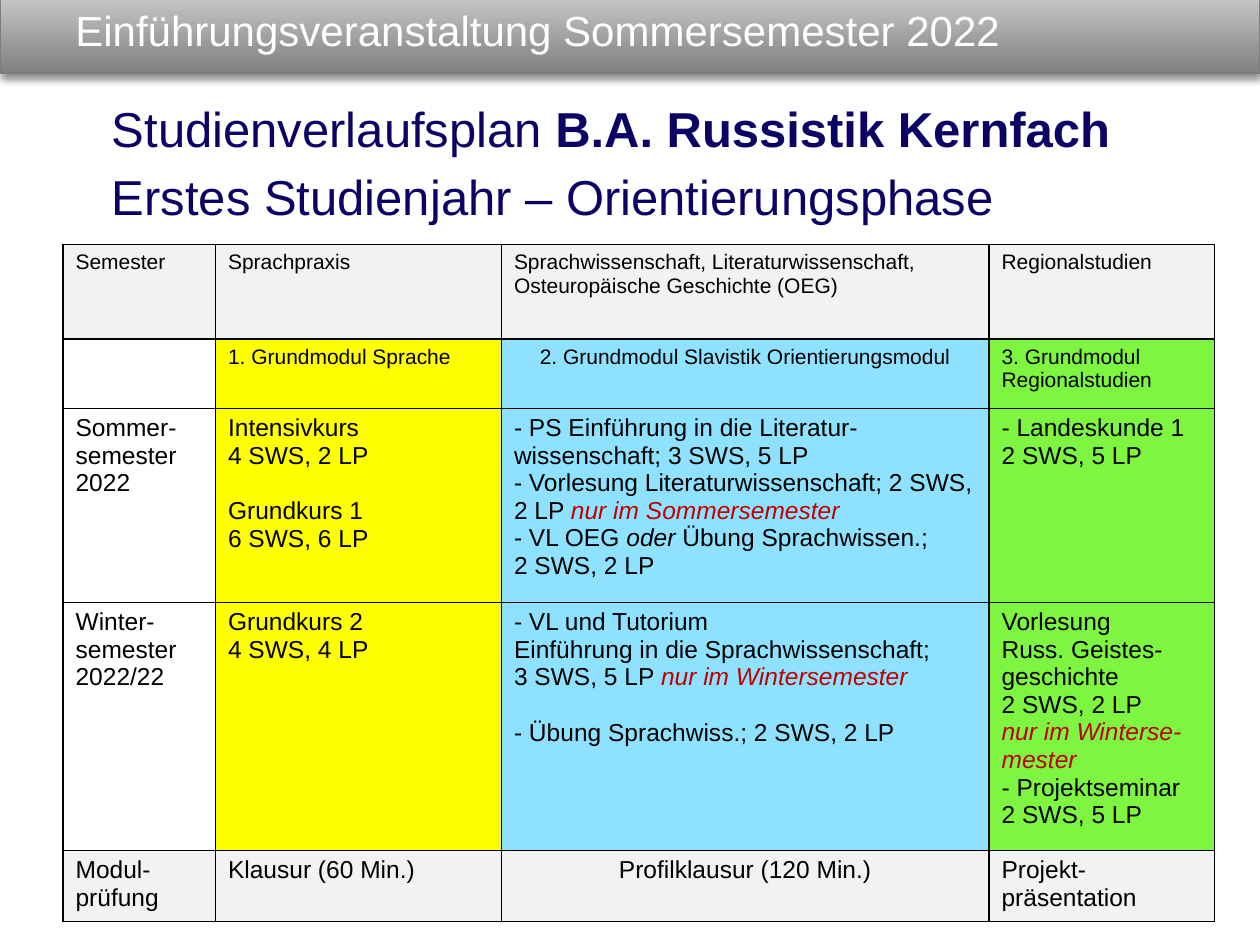
"""Build the first-year study plan slide for the Russian studies major."""
from typing import NamedTuple

import lxml.etree
import pptx
import pptx.dml.color
import pptx.enum.shapes
import pptx.enum.text
import pptx.oxml.ns
import pptx.util

Inches, Pt = pptx.util.Inches, pptx.util.Pt
RGBColor = pptx.dml.color.RGBColor
qn = pptx.oxml.ns.qn
ALIGN = pptx.enum.text.PP_ALIGN
ANCHOR = pptx.enum.text.MSO_ANCHOR

BLACK = RGBColor(0x00, 0x00, 0x00)
WHITE = RGBColor(0xFF, 0xFF, 0xFF)
NAVY = RGBColor(0x0A, 0x03, 0x65)
RED = RGBColor(0xC0, 0x00, 0x00)
LIGHT_GRAY = RGBColor(0xF2, 0xF2, 0xF2)
YELLOW = RGBColor(0xFF, 0xFF, 0x00)
BLUE = RGBColor(0x8F, 0xE2, 0xFF)
GREEN = RGBColor(0x7D, 0xF5, 0x41)
BAND_DARK = RGBColor(0x80, 0x80, 0x80)
BAND_LIGHT = RGBColor(0xCD, 0xCD, 0xCD)
BAND_EDGE = RGBColor(0x7D, 0x7D, 0x7D)

FONT = "Arial"
COLUMN_WIDTHS = (1.21, 2.27, 3.87, 1.79)
ROW_HEIGHTS = (0.75, 0.55, 1.54, 1.85, 0.54)
ROW_SIZES = (12, 12, 14, 14, 14)
GRAY_ROW = (LIGHT_GRAY,) * 4
MODULE_ROW = (None, YELLOW, BLUE, GREEN)
ROW_FILLS = (GRAY_ROW, MODULE_ROW, MODULE_ROW, MODULE_ROW, GRAY_ROW)
CENTERED_CELLS = {(1, 2), (4, 2)}


class Run(NamedTuple):
    """A piece of text that differs from its paragraph."""
    text: str
    bold: bool = False
    italic: bool = False
    color: RGBColor | None = None


class Line(NamedTuple):
    """A paragraph made of runs, with space before it in points."""
    runs: list
    space: float = 0


def only(term):
    """Return the red note on the term in which a course is offered."""
    return Run(f"nur im {term}", italic=True, color=RED)


HEADING = [
    Line(["Studienverlaufsplan ", Run("B.A. Russistik Kernfach", bold=True)]),
    Line(["Erstes Studienjahr – Orientierungsphase"], 5.5),
]
PLAN = [
    [["Semester"], ["Sprachpraxis"],
     ["Sprachwissenschaft, Literaturwissenschaft, Osteuropäische Geschichte (OEG)"],
     ["Regionalstudien"]],
    [[], ["1. Grundmodul Sprache"], ["2. Grundmodul Slavistik Orientierungsmodul"],
     ["3. Grundmodul Regionalstudien"]],
    [["Sommer-semester 2022"],
     ["Intensivkurs", "4 SWS, 2 LP", Line(["Grundkurs 1"], 16), "6 SWS, 6 LP"],
     ["- PS Einführung in die Literatur-wissenschaft; 3 SWS, 5 LP",
      Line(["- Vorlesung Literaturwissenschaft; 2 SWS, 2 LP ", only("Sommersemester")]),
      Line(["- VL OEG ", Run("oder", italic=True), " Übung Sprachwissen.;"]),
      "2 SWS, 2 LP"],
     ["- Landeskunde 1", "2 SWS, 5 LP"]],
    [["Winter-semester 2022/22"],
     ["Grundkurs 2", "4 SWS, 4 LP"],
     ["- VL und Tutorium", "Einführung in die Sprachwissenschaft;",
      Line(["3 SWS, 5 LP ", only("Wintersemester")]),
      Line(["- Übung Sprachwiss.; 2 SWS, 2 LP"], 16)],
     ["Vorlesung", "Russ. Geistes-geschichte", "2 SWS, 2 LP",
      Line([only("Winterse-mester")]), "- Projektseminar", "2 SWS, 5 LP"]],
    [["Modul-prüfung"], ["Klausur (60 Min.)"], ["Profilklausur (120 Min.)"],
     ["Projekt-präsentation"]],
]


def write_text(frame, lines, *, size, color=BLACK, align=ALIGN.LEFT):
    """Fill a text frame with lines in one base format."""
    frame.word_wrap = True
    for index, line in enumerate(lines):
        line = Line([line]) if isinstance(line, str) else line
        para = frame.add_paragraph() if index else frame.paragraphs[0]
        para.alignment = align
        if line.space:
            para.space_before = Pt(line.space)
        for part in line.runs:
            part = Run(part) if isinstance(part, str) else part
            span = para.add_run()
            span.text = part.text
            span.font.name = FONT
            span.font.size = Pt(size)
            span.font.bold = part.bold
            span.font.italic = part.italic
            span.font.color.rgb = part.color or color


def add_text_box(page, left, top, width, height, lines, *, anchor=ANCHOR.TOP,
                 margin_top=0.05, **text_format):
    """Add a text box and write its lines."""
    box = page.shapes.add_textbox(Inches(left), Inches(top), Inches(width), Inches(height))
    box.text_frame.vertical_anchor = anchor
    box.text_frame.margin_top = Inches(margin_top)
    write_text(box.text_frame, lines, **text_format)


def add_header_band(page):
    """Add the gray gradient band with its soft shadow."""
    band = page.shapes.add_shape(pptx.enum.shapes.MSO_SHAPE.RECTANGLE,
                                 Inches(0), Inches(-0.08), Inches(10), Inches(0.66))
    band.fill.gradient()
    band.fill.gradient_angle = 90
    for stop, color in zip(band.fill.gradient_stops, (BAND_DARK, BAND_LIGHT)):
        stop.color.rgb = color
    band.line.color.rgb = BAND_EDGE
    band.line.width = Pt(0.75)
    band.shadow.inherit = False
    effects = band.element.spPr.find(qn("a:effectLst"))
    shadow = lxml.etree.SubElement(effects, qn("a:outerShdw"), blurRad=str(Pt(4)),
                                   dist=str(Pt(3)), dir="5400000", rotWithShape="0")
    color = lxml.etree.SubElement(shadow, qn("a:srgbClr"), val=str(BLACK))
    lxml.etree.SubElement(color, qn("a:alpha"), val="43000")


def add_borders(cell):
    """Draw a black border on all four sides of a cell."""
    properties = cell._tc.get_or_add_tcPr()
    for side in ("a:lnL", "a:lnR", "a:lnT", "a:lnB"):
        border = lxml.etree.SubElement(properties, qn(side), w=str(Pt(1)))
        fill = lxml.etree.SubElement(border, qn("a:solidFill"))
        lxml.etree.SubElement(fill, qn("a:srgbClr"), val=str(BLACK))


def format_cell(cell, lines, fill, **text_format):
    """Give a cell its borders, fill and text."""
    add_borders(cell)
    if fill is None:
        cell.fill.background()
    else:
        cell.fill.solid()
        cell.fill.fore_color.rgb = fill
    write_text(cell.text_frame, lines, **text_format)


def add_plan_table(page):
    """Add the table of semesters and modules."""
    table = page.shapes.add_table(
        len(ROW_HEIGHTS), len(COLUMN_WIDTHS), Inches(0.5), Inches(1.94),
        Inches(sum(COLUMN_WIDTHS)), Inches(sum(ROW_HEIGHTS))).table
    table.first_row = table.horz_banding = False
    for column, width in zip(table.columns, COLUMN_WIDTHS):
        column.width = Inches(width)
    for row, height in zip(table.rows, ROW_HEIGHTS):
        row.height = Inches(height)
    for row, (cells, fills, size) in enumerate(zip(PLAN, ROW_FILLS, ROW_SIZES)):
        for column, (lines, fill) in enumerate(zip(cells, fills)):
            align = ALIGN.CENTER if (row, column) in CENTERED_CELLS else ALIGN.LEFT
            format_cell(table.cell(row, column), lines, fill, size=size, align=align)


def main():
    """Build and save the deck."""
    deck = pptx.Presentation()
    deck.slide_width, deck.slide_height = Inches(10), Inches(7.5)
    page = deck.slides.add_slide(deck.slide_layouts[6])
    add_header_band(page)
    add_text_box(page, 0.5, 0, 9.27, 0.47, ["Einführungsveranstaltung Sommersemester 2022"],
                 anchor=ANCHOR.MIDDLE, size=24, color=WHITE)
    add_plan_table(page)
    add_text_box(page, 0.79, 0.68, 8.43, 1.11, HEADING, margin_top=0.1,
                 size=28, color=NAVY)
    deck.save("out.pptx")


if __name__ == "__main__":
    main()
